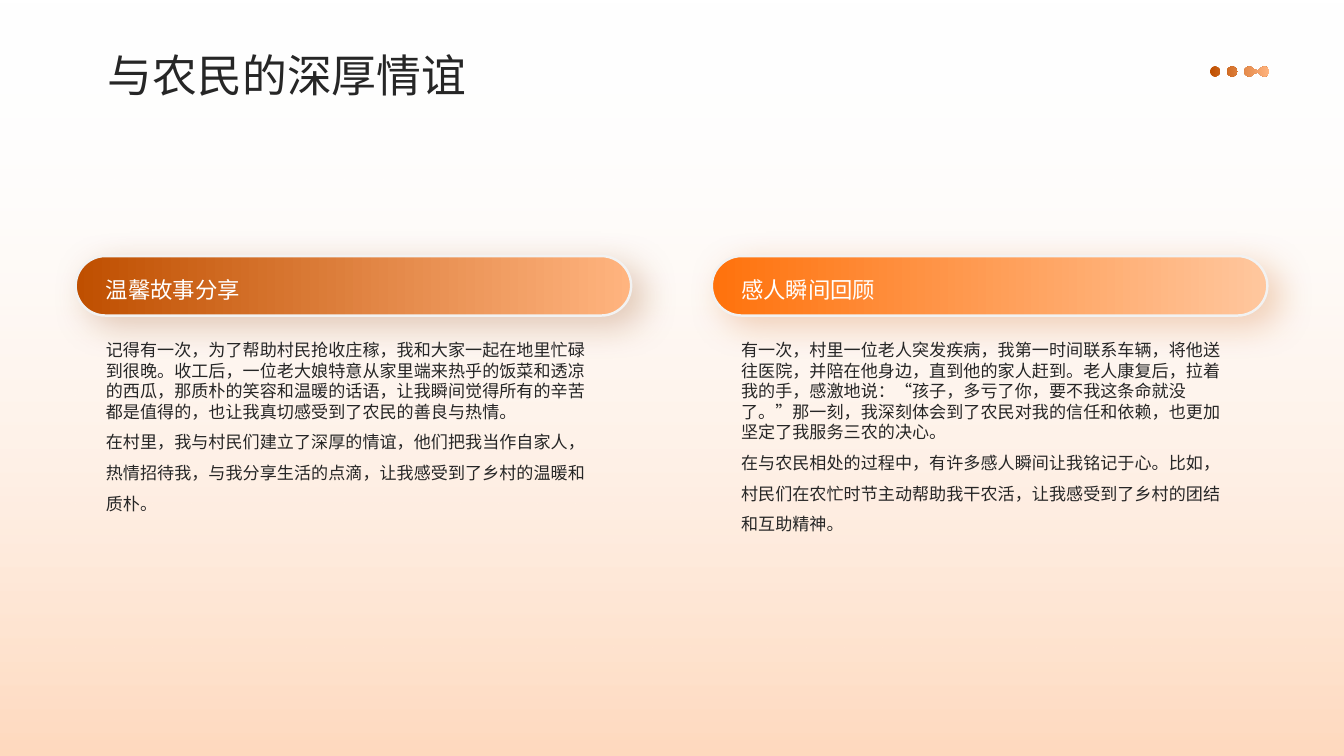
from dataclasses import dataclass
from math import cos, radians, sin

from lxml import etree
from pptx import Presentation
from pptx.dml.color import RGBColor
from pptx.enum.shapes import MSO_SHAPE
from pptx.enum.text import MSO_ANCHOR
from pptx.oxml.ns import qn
from pptx.util import Inches, Pt

RECT = MSO_SHAPE.RECTANGLE
PILL = MSO_SHAPE.ROUNDED_RECTANGLE
TOP = MSO_ANCHOR.TOP
MIDDLE = MSO_ANCHOR.MIDDLE

Point = tuple[float, float]


@dataclass(frozen=True)
class Theme:
    font: str = "Noto Sans CJK SC"
    ink: str = "262626"
    white: str = "FFFFFF"
    outline: str = "F2F2F2"
    backdrop: tuple[str, str] = ("FFFFFF", "FFDABF")
    rust: tuple[str, str] = ("BF4F00", "FFB47F")
    orange: tuple[str, str] = ("FF720C", "FFC79E")
    title_size: float = 32
    heading_size: float = 16
    body_size: float = 12.2


@dataclass(frozen=True)
class Column:
    left: float
    heading: str
    story: str
    reflection: str
    colors: tuple[str, str]
    shadow: str


T = Theme()
COLUMNS = [
    Column(
        7.06, "感人瞬间回顾",
        "有一次，村里一位老人突发疾病，我第一时间联系车辆，将他送往医院，并陪在他身边，直到他的家人赶到。老人康复后，拉着我的手，感激地说：“孩子，多亏了你，要不我这条命就没了。”那一刻，我深刻体会到了农民对我的信任和依赖，也更加坚定了我服务三农的决心。",
        "在与农民相处的过程中，有许多感人瞬间让我铭记于心。比如，村民们在农忙时节主动帮助我干农活，让我感受到了乡村的团结和互助精神。",
        T.orange, "C85400"),
    Column(
        0.75, "温馨故事分享",
        "记得有一次，为了帮助村民抢收庄稼，我和大家一起在地里忙碌到很晚。收工后，一位老大娘特意从家里端来热乎的饭菜和透凉的西瓜，那质朴的笑容和温暖的话语，让我瞬间觉得所有的辛苦都是值得的，也让我真切感受到了农民的善良与热情。",
        "在村里，我与村民们建立了深厚的情谊，他们把我当作自家人，热情招待我，与我分享生活的点滴，让我感受到了乡村的温暖和质朴。",
        T.rust, "8F3B00"),
]


def set_gradient(s, colors: tuple[str, str], angle: float = 0) -> None:
    s.fill.gradient()
    s.fill.gradient_angle = angle
    for stop, color in zip(s.fill.gradient_stops, colors):
        stop.color.rgb = RGBColor.from_string(color)


def set_alpha(rgb, percent: int) -> None:
    etree.SubElement(rgb, qn("a:alpha"), val=str(percent * 1000))


def add_block(slide, kind, left: float, top: float, width: float, height: float,
              colors: tuple[str, str], angle: float = 0):
    s = slide.shapes.add_shape(kind, Inches(left), Inches(top),
                               Inches(width), Inches(height))
    s.shadow.inherit = False
    set_gradient(s, colors, angle)
    s.line.fill.background()
    return s


def add_shadow(s, color: str) -> None:
    effects = s._element.spPr.find(qn("a:effectLst"))
    shadow = etree.SubElement(effects, qn("a:outerShdw"), blurRad=str(Pt(25)),
                              dist=str(Pt(10)), dir=str(40 * 60000),
                              algn="tl", rotWithShape="0")
    set_alpha(etree.SubElement(shadow, qn("a:srgbClr"), val=color), 25)


def add_text(slide, left: float, top: float, width: float, height: float,
             paragraphs: list[tuple[str, float]], size: float, color: str,
             anchor=MIDDLE) -> None:
    """Each paragraph is its text and its line spacing."""
    box = slide.shapes.add_textbox(Inches(left), Inches(top),
                                   Inches(width), Inches(height))
    tf = box.text_frame
    tf.word_wrap = True
    tf.vertical_anchor = anchor
    tf.margin_left = tf.margin_top = tf.margin_right = tf.margin_bottom = 0
    tf.text = "\n".join(text for text, _ in paragraphs)
    for p, (_, spacing) in zip(tf.paragraphs, paragraphs):
        p.line_spacing = spacing
        r = p.runs[0]
        r.font.size = Pt(size)
        r.font.color.rgb = RGBColor.from_string(color)
        r.font.name = T.font
        etree.SubElement(r.font._element, qn("a:ea"), typeface=T.font)


def arc(x: float, start: int, end: int) -> list[Point]:
    """Points on a dot centred at x, clockwise in degrees."""
    radius, y = 0.05, 0.71
    return [(x + radius * cos(radians(a)), y + radius * sin(radians(a)))
            for a in range(start, end + 1, 30)]


def add_dots(slide) -> None:
    barbell = (arc(12.39, 30, 330) + [(12.47, 0.7)]
               + arc(12.54, 210, 510) + [(12.47, 0.72)])
    contours = [barbell, arc(12.22, 0, 330), arc(12.05, 0, 330)]
    outlines = [[(Inches(x), Inches(y)) for x, y in c] for c in contours]
    builder = slide.shapes.build_freeform(*outlines[0][0])
    for i, points in enumerate(outlines):
        if i:
            builder.move_to(*points[0])
        builder.add_line_segments(points[1:], close=True)
    s = builder.convert_to_shape()
    s.shadow.inherit = False
    set_gradient(s, T.rust)
    s.line.fill.background()


def add_pill(slide, col: Column) -> None:
    pill = add_block(slide, PILL, col.left, 2.54, 5.51, 0.59, col.colors)
    pill.adjustments[0] = 0.5
    pill.line.color.rgb = RGBColor.from_string(T.outline)
    pill.line.width = Pt(1.75)
    add_shadow(pill, col.shadow)


def add_column_text(slide, col: Column) -> None:
    left = round(col.left + 0.29, 2) if col.left > 1 else 1.05
    add_text(slide, left, 3.37, 4.92, 2.07,
             [(col.story, 1.0), (col.reflection, 1.5)],
             T.body_size, T.ink, TOP)
    add_text(slide, left, 2.64, 4.92, 0.39, [(col.heading, 1.3)],
             T.heading_size, T.white)


def main() -> None:
    prs = Presentation()
    prs.slide_width, prs.slide_height = Inches(13.33), Inches(7.5)
    slide = prs.slides.add_slide(prs.slide_layouts[6])

    # Backdrop, fading in downwards from clear
    backdrop = add_block(slide, RECT, 0, 0, 13.33, 7.5, T.backdrop, 270)
    set_alpha(next(backdrop._element.spPr.iter(qn("a:srgbClr"))), 0)

    # Pills, then the text of the columns from left to right
    for col in COLUMNS:
        add_pill(slide, col)
    for col in reversed(COLUMNS):
        add_column_text(slide, col)

    # Title and corner ornament
    add_text(slide, 1.07, 0.46, 10.76, 0.51, [("与农民的深厚情谊", 1.1)],
             T.title_size, T.ink)
    add_dots(slide)

    prs.save("out.pptx")


if __name__ == "__main__":
    main()
